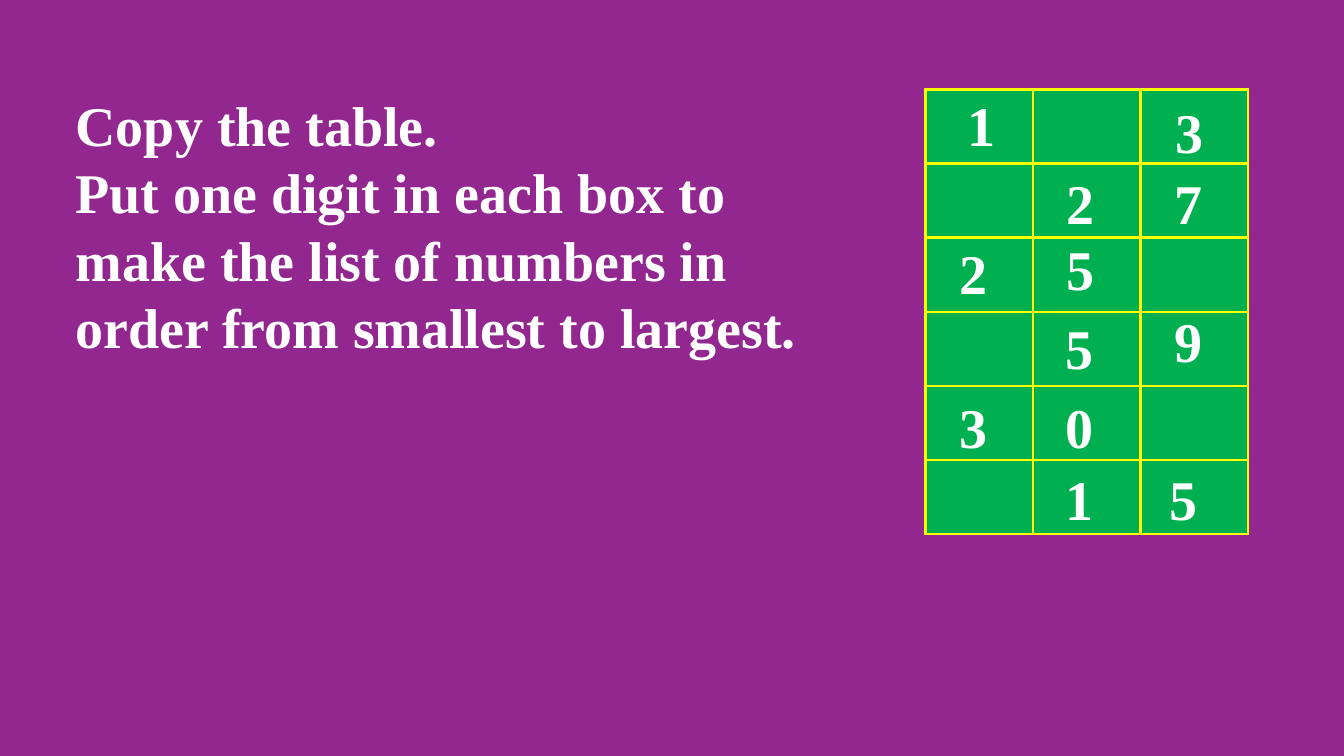
"""Build a slide with a number-ordering puzzle table."""
from lxml.etree import SubElement
from pptx import Presentation
from pptx.dml.color import RGBColor
from pptx.enum.text import MSO_ANCHOR, MSO_AUTO_SIZE, PP_ALIGN
from pptx.oxml.ns import qn
from pptx.util import Pt

PURPLE = RGBColor(0x92, 0x27, 0x8F)
GREEN = RGBColor(0x00, 0xB0, 0x50)
YELLOW = RGBColor(0xFF, 0xFF, 0x00)
WHITE = RGBColor(0xFF, 0xFF, 0xFF)
FONT = "Times New Roman"
ROWS, COLUMNS = 6, 3
INSTRUCTIONS = (
    "Copy the table.\n"
    "Put one digit in each box to make the list of numbers in "
    "order from smallest to largest."
)
DIGITS = [
    ("1", 684, 61), ("3", 832.3, 66.2),
    ("2", 754.6, 116.6), ("7", 831.6, 116.6),
    ("2", 678.2, 167), ("5", 754.6, 164.2),
    ("5", 753.8, 220.3), ("9", 831.6, 215.3),
    ("3", 678.2, 277.2), ("0", 753.8, 277.2),
    ("1", 753.8, 328.3), ("5", 828, 328.3),
]


def format_text(box, text):
    frame = box.text_frame
    frame.text = text
    frame.word_wrap = True
    frame.auto_size = MSO_AUTO_SIZE.NONE
    frame.vertical_anchor = MSO_ANCHOR.TOP
    for para in frame.paragraphs:
        para.alignment = PP_ALIGN.LEFT
        for span in para.runs:
            span.font.name = FONT
            span.font.size = Pt(40)
            span.font.bold = True
            span.font.color.rgb = WHITE


def add_instructions(page):
    title = page.shapes.title
    title.left, title.top = Pt(46.8), Pt(61.2)
    title.width, title.height = Pt(553.7), Pt(200.9)
    format_text(title, INSTRUCTIONS)


def add_digit(page, digit, left, top):
    box = page.shapes.add_textbox(Pt(left), Pt(top), Pt(63.4), Pt(55.4))
    format_text(box, digit)


def set_borders(cell):
    properties = cell._tc.get_or_add_tcPr()
    for side in ("a:lnL", "a:lnR", "a:lnT", "a:lnB"):
        line = SubElement(properties, qn(side), w=str(Pt(2.25)))
        fill = SubElement(line, qn("a:solidFill"))
        SubElement(fill, qn("a:srgbClr"), val=str(YELLOW))


def add_grid(page):
    frame = page.shapes.add_table(
        ROWS, COLUMNS, Pt(661), Pt(64.1), Pt(230.4), Pt(317.4))
    for cell in frame.table.iter_cells():
        set_borders(cell)
        cell.fill.solid()
        cell.fill.fore_color.rgb = GREEN


def main():
    deck = Presentation()
    deck.slide_width, deck.slide_height = Pt(960), Pt(540)
    page = deck.slides.add_slide(deck.slide_layouts[5])
    page.background.fill.solid()
    page.background.fill.fore_color.rgb = PURPLE
    add_grid(page)
    for digit, left, top in DIGITS:
        add_digit(page, digit, left, top)
    add_instructions(page)
    deck.save("out.pptx")


if __name__ == "__main__":
    main()
